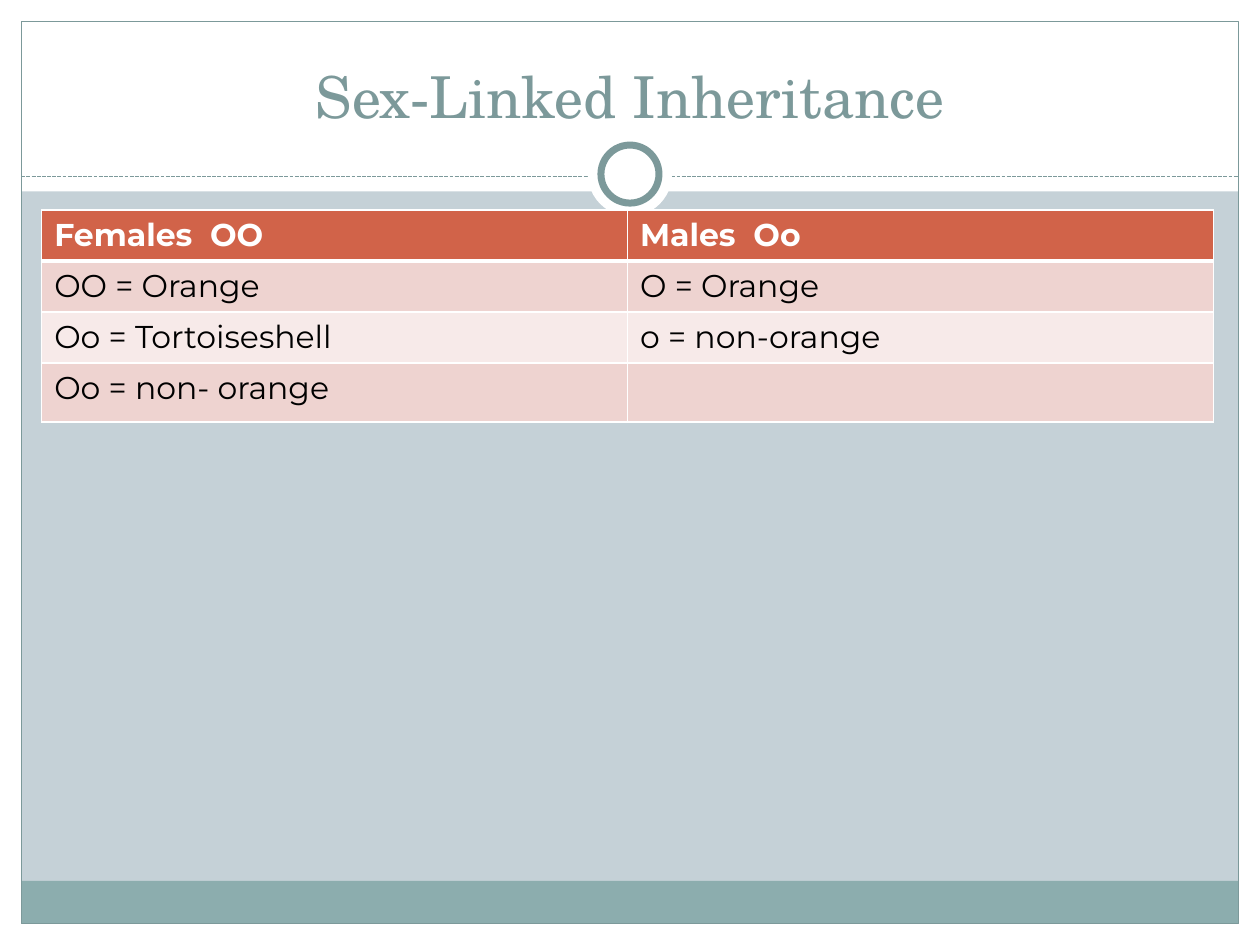
"""Build the slide on sex-linked inheritance with its framed table."""
from lxml import etree
from pptx import Presentation
from pptx.dml.color import RGBColor
from pptx.enum.dml import MSO_LINE
from pptx.enum.shapes import MSO_CONNECTOR, MSO_SHAPE
from pptx.enum.text import MSO_ANCHOR, PP_ALIGN
from pptx.oxml.ns import qn
from pptx.util import Cm, Pt

RECT, OVAL = MSO_SHAPE.RECTANGLE, MSO_SHAPE.OVAL
STRAIGHT, DASH = MSO_CONNECTOR.STRAIGHT, MSO_LINE.SQUARE_DOT
CENTER, BOTTOM = PP_ALIGN.CENTER, MSO_ANCHOR.BOTTOM

WHITE, BLACK, TEAL, BAND = "FFFFFF", "000000", "7C999A", "8CADAE"
BACKGROUND, HEADER, ROW_FILLS = "C5D1D7", "D16349", ("F7EAE9", "EED3D0")
TITLE_FONT, TABLE_FONT = "TeX Gyre Schola", "Montserrat"

TITLE = "Sex-Linked Inheritance"
ROWS = [
    ("Females  OO", "Males  Oo"),
    ("OO = Orange", "O = Orange"),
    ("Oo = Tortoiseshell", "o = non-orange"),
    ("Oo = non- orange", ""),
]
ROW_HEIGHTS = (1.03, 1.03, 1.03, 1.19)
COL_WIDTH = 11.81

W, H, MARGIN = 25.4, 19.05, 0.43
INNER_W, INNER_H = W - 2 * MARGIN, H - 2 * MARGIN
HEAD_H, FOOT_H, RULE_Y = 3.86, 0.86, 3.56
RING_Y = 3.51

SHAPES = [
    (RECT, 0, H - MARGIN, W, MARGIN, WHITE, None, 0),
    (RECT, 0, 0, W, HEAD_H, WHITE, None, 0),
    (RECT, 0, 0, MARGIN, H, WHITE, None, 0),
    (RECT, W - MARGIN, 0, MARGIN, H, WHITE, None, 0),
    (RECT, MARGIN, H - MARGIN - FOOT_H, INNER_W, FOOT_H, BAND, None, 0),
    (RECT, MARGIN, MARGIN, INNER_W, INNER_H, None, TEAL, 0.75),
]
RINGS = [(1.7, None, 0), (1.17, TEAL, 4)]


def rgb(color):
    return RGBColor.from_string(color)


def add_shape(s, kind, x, y, w, h, fill, line, width):
    sp = s.shapes.add_shape(kind, Cm(x), Cm(y), Cm(w), Cm(h))
    sp.shadow.inherit = False
    if fill:
        sp.fill.solid()
        sp.fill.fore_color.rgb = rgb(fill)
    else:
        sp.fill.background()
    if line:
        sp.line.color.rgb = rgb(line)
        sp.line.width = Pt(width)
    else:
        sp.line.fill.background()


def add_rule(s):
    line = s.shapes.add_connector(STRAIGHT, Cm(MARGIN), Cm(RULE_Y), Cm(W - MARGIN), Cm(RULE_Y))
    line.line.color.rgb = rgb(TEAL)
    line.line.width = Pt(0.75)
    line.line.dash_style = DASH
    etree.SubElement(line._element.spPr, qn("a:effectLst"))


def add_run(p, text, font, size, color, bold=False):
    r = p.add_run()
    r.text = text
    r.font.name, r.font.size, r.font.bold = font, Pt(size), bold
    r.font.color.rgb = rgb(color)


def set_borders(cell, bottom):
    pr = cell._tc.get_or_add_tcPr()
    for i, side in enumerate("LRTB"):
        width = bottom if side == "B" else 1
        ln = etree.Element(qn(f"a:ln{side}"), w=str(Pt(width)))
        fill = etree.SubElement(ln, qn("a:solidFill"))
        etree.SubElement(fill, qn("a:srgbClr"), val=WHITE)
        pr.insert(i, ln)


def add_title(s):
    box = s.shapes.add_textbox(Cm(0.85), Cm(0.64), Cm(23.7), Cm(2.1))
    tf = box.text_frame
    tf.word_wrap = True
    tf.vertical_anchor = BOTTOM
    p = tf.paragraphs[0]
    p.alignment = CENTER
    add_run(p, TITLE, TITLE_FONT, 33, TEAL)


def add_table(s):
    table = s.shapes.add_table(len(ROWS), 2, Cm(0.84), Cm(4.23),
                               Cm(2 * COL_WIDTH), Cm(sum(ROW_HEIGHTS))).table
    for col in table.columns:
        col.width = Cm(COL_WIDTH)
    for i, (texts, height) in enumerate(zip(ROWS, ROW_HEIGHTS)):
        head = i == 0
        table.rows[i].height = Cm(height)
        for j, text in enumerate(texts):
            cell = table.cell(i, j)
            cell.fill.solid()
            cell.fill.fore_color.rgb = rgb(HEADER if head else ROW_FILLS[i % 2])
            set_borders(cell, 3 if head else 1)
            if text:
                add_run(cell.text_frame.paragraphs[0], text, TABLE_FONT, 18,
                        WHITE if head else BLACK, head)


def main():
    prs = Presentation()
    prs.slide_width, prs.slide_height = Cm(W), Cm(H)
    s = prs.slides.add_slide(prs.slide_layouts[6])
    s.background.fill.solid()
    s.background.fill.fore_color.rgb = rgb(BACKGROUND)
    for shape in SHAPES:
        add_shape(s, *shape)
    add_rule(s)
    for d, line, width in RINGS:
        add_shape(s, OVAL, (W - d) / 2, RING_Y - d / 2, d, d, WHITE, line, width)
    add_title(s)
    add_table(s)
    prs.save("out.pptx")


if __name__ == "__main__":
    main()
